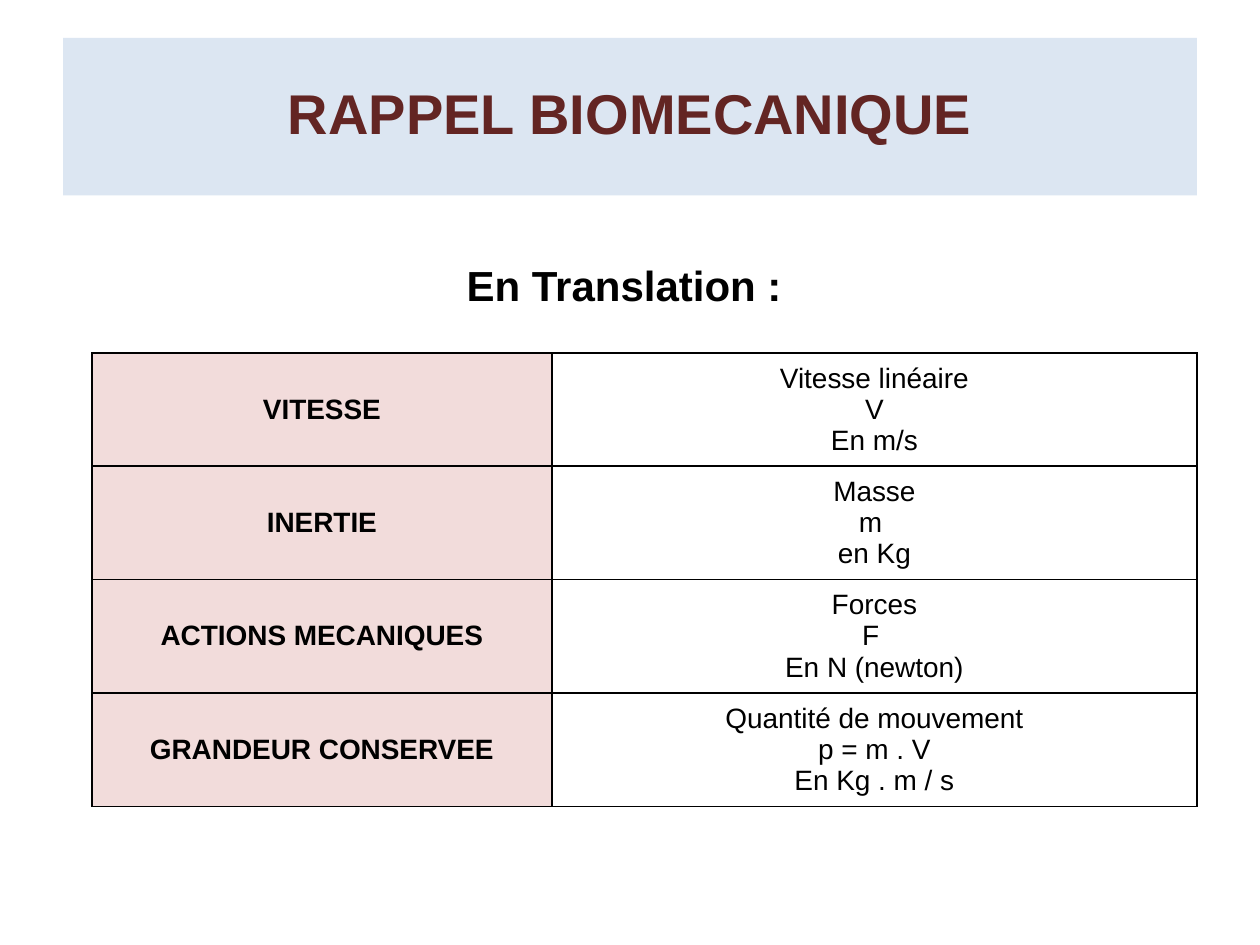
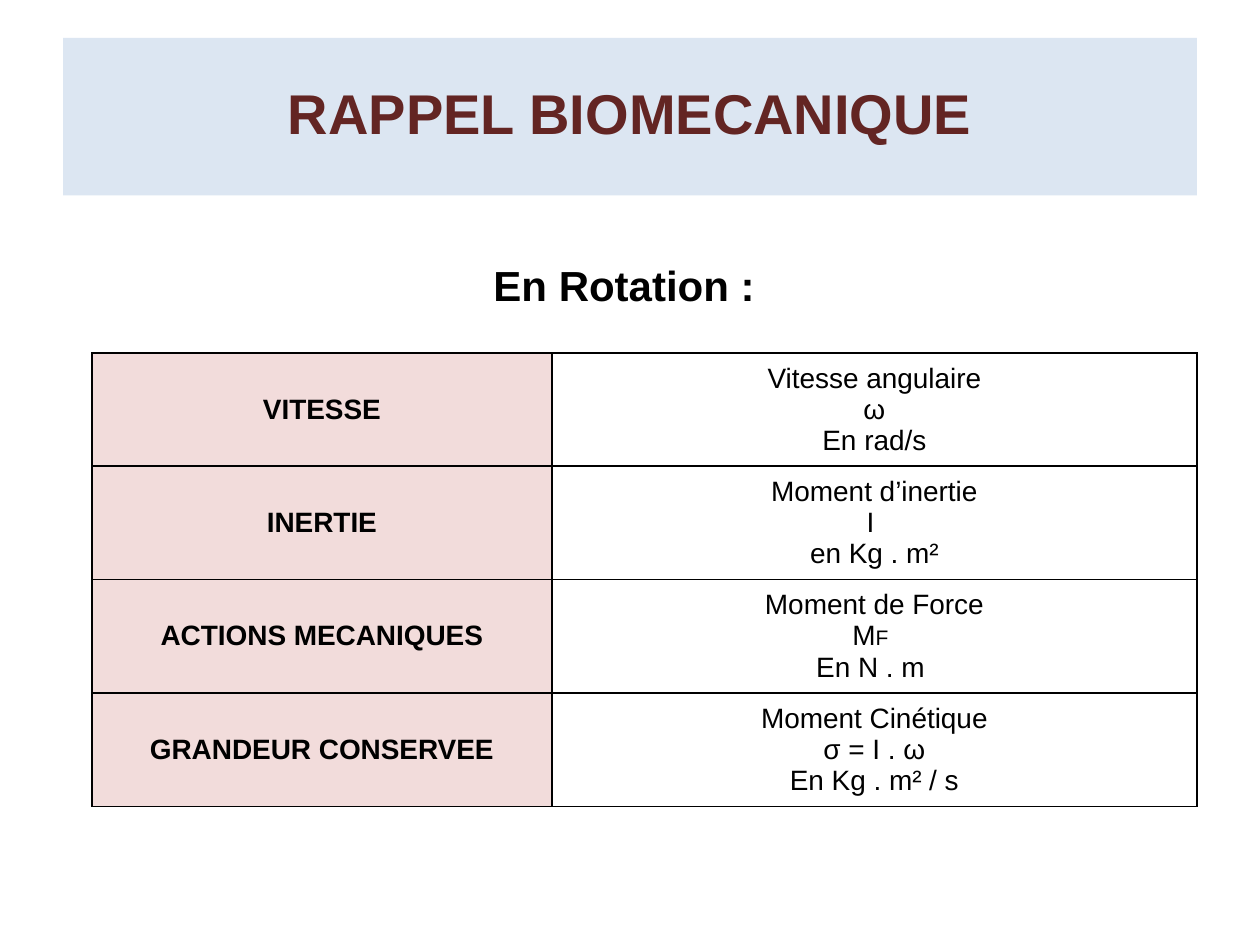
from dataclasses import dataclass

from lxml import etree
from pptx import Presentation
from pptx import util as u
from pptx.dml.color import RGBColor
from pptx.enum import text
from pptx.oxml import ns


@dataclass(frozen=True)
class Theme:
    font: str = "Arial"
    band: str = "DCE6F2"
    title: str = "632523"
    ink: str = "000000"
    label: str = "F2DCDB"
    big: int = 32
    mid: int = 24
    body: int = 16
    small: int = 12
    line: int = 1


T = Theme()
WIDE, HIGH = 10, 7.5
EDGE = 0.05 * WIDE  # side margin
SPAN = WIDE - 2 * EDGE
LEFT, TOP = 0.73, 2.8  # table corner
COLS = 3.65, 5.12
ROW = 0.9

LABELS = "VITESSE", "INERTIE", "ACTIONS MECANIQUES", "GRANDEUR CONSERVEE"

# Lines of the right column; text between bars is set small
MOVES = {
    "En Translation : ": [
        ("Vitesse linéaire", "V", "En m/s"),
        ("Masse", "m ", "en Kg"),
        ("Forces", "F ", "En N (newton)"),
        ("Quantité de mouvement", "p = m . V", "En Kg . m / s"),
    ],
    "En Rotation : ": [
        ("Vitesse angulaire", "ω", "En rad/s"),
        ("Moment d’inertie", "I ", "en Kg . m²"),
        ("Moment de Force", "M|F| ", "En N . m "),
        ("Moment Cinétique", "σ = I . ω", "En Kg . m² / s"),
    ],
}


def place(shape, *box):
    shape.left, shape.top, shape.width, shape.height = map(u.Inches, box)


def pad(frame, gap):
    frame.margin_left = frame.margin_right = u.Inches(gap)
    frame.margin_top = frame.margin_bottom = u.Inches(gap)


def paint(fill, color):
    fill.solid()
    fill.fore_color.rgb = RGBColor.from_string(color)


def write(frame, lines, size, bold=False, color=T.ink):
    """Fill a text frame with centred lines."""
    for i, line in enumerate(lines):
        para = frame.paragraphs[0] if i == 0 else frame.add_paragraph()
        para.alignment = text.PP_ALIGN.CENTER
        font = para.font
        font.name, font.size, font.bold = T.font, u.Pt(size), bold
        font.color.rgb = RGBColor.from_string(color)
        for j, part in enumerate(line.split("|")):
            run = para.add_run()
            run.text = part
            if j % 2:
                run.font.size = u.Pt(T.small)


def frame_cell(cell):
    """Draw the four borders of a cell."""
    props = cell._tc.get_or_add_tcPr()
    for side in ("lnL", "lnR", "lnT", "lnB"):
        edge = etree.SubElement(props, ns.qn("a:" + side), w=str(u.Pt(T.line)))
        fill = etree.SubElement(edge, ns.qn("a:solidFill"))
        etree.SubElement(fill, ns.qn("a:srgbClr"), val=T.ink)


def add_title(slide, words):
    title = slide.shapes.title
    place(title, EDGE, 0.04 * HIGH, SPAN, HIGH / 6)
    paint(title.fill, T.band)
    frame = title.text_frame
    pad(frame, 0)
    frame.auto_size = text.MSO_AUTO_SIZE.NONE
    frame.vertical_anchor = text.MSO_ANCHOR.MIDDLE
    write(frame, [words], T.big, True, T.title)
    frame.paragraphs[0].line_spacing = 0.9


def add_head(slide, words):
    box = slide.shapes.add_textbox(0, 0, 0, 0)
    place(box, EDGE, 2.01, SPAN, 0.5)
    frame = box.text_frame
    frame.word_wrap = True
    pad(frame, 0.05)
    write(frame, [words], T.mid, True)


def add_grid(slide, facts):
    size = LEFT, TOP, sum(COLS), ROW * len(facts)
    grid = slide.shapes.add_table(len(facts), len(COLS), *map(u.Inches, size)).table
    grid.first_row = grid.horz_banding = False
    for col, width in zip(grid.columns, COLS):
        col.width = u.Inches(width)
    for row, label, lines in zip(grid.rows, LABELS, facts):
        name, value = row.cells
        for cell in (name, value):
            frame_cell(cell)
            cell.vertical_anchor = text.MSO_ANCHOR.MIDDLE
        paint(name.fill, T.label)
        value.fill.background()
        write(name.text_frame, [label], T.body, True)
        write(value.text_frame, lines, T.body)


def main():
    deck = Presentation()
    deck.slide_width, deck.slide_height = u.Inches(WIDE), u.Inches(HIGH)
    for head, facts in MOVES.items():
        slide = deck.slides.add_slide(deck.slide_layouts[5])  # title only
        add_title(slide, "RAPPEL BIOMECANIQUE")
        add_head(slide, head)
        add_grid(slide, facts)
    deck.save("out.pptx")


if __name__ == "__main__":
    main()
